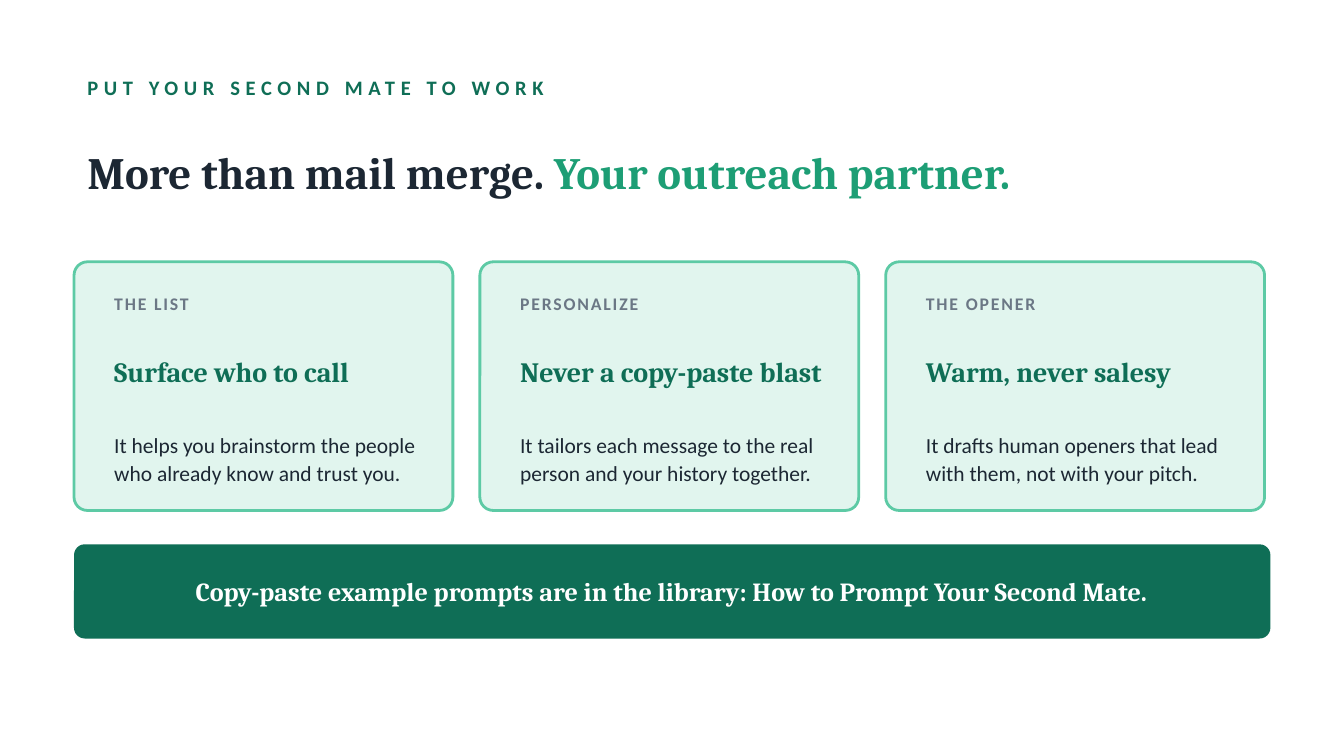
from pptx import Presentation
from pptx.dml.color import RGBColor
from pptx.enum.shapes import MSO_SHAPE as Shape
from pptx.enum.text import MSO_ANCHOR as Anchor, PP_ALIGN as Align
from pptx.util import Cm, Pt

SANS, SERIF = "Calibri", "Cambria"
FOREST, GREEN, MINT, PALE = "0F6E56", "1D9E75", "5DCAA5", "E1F5EE"
INK, SLATE, WHITE = "1C2733", "6B7785", "FFFFFF"

LEFT, CONTENT_WIDTH = 1.4, 22.61
CARD_TOP, CARD_WIDTH, CARD_HEIGHT, CARD_PITCH = 4.95, 7.16, 4.7, 7.67
CARD_PADDING, CARD_TEXT_WIDTH = 0.51, 6.23
BANNER_TOP, BANNER_HEIGHT = 10.29, 1.78

CARDS = [
    ("THE LIST", "Surface who to call",
     "It helps you brainstorm the people who already know and trust you."),
    ("PERSONALIZE", "Never a copy-paste blast",
     "It tailors each message to the real person and your history together."),
    ("THE OPENER", "Warm, never salesy",
     "It drafts human openers that lead with them, not with your pitch."),
]


def rgb(value):
    return RGBColor.from_string(value)


def add_text(slide, box, parts, font, size, bold=True, tracking=0,
             align=Align.LEFT, line_spacing=None):
    frame = slide.shapes.add_textbox(*map(Cm, box)).text_frame
    frame.word_wrap = True
    frame.vertical_anchor = Anchor.MIDDLE
    paragraph = frame.paragraphs[0]
    paragraph.alignment = align
    paragraph.line_spacing = line_spacing
    paragraph.font.name = font
    paragraph.font.size = Pt(size)
    paragraph.font.bold = bold
    for wording, color in parts:
        run = paragraph.add_run()
        run.text = wording
        run.font.color.rgb = rgb(color)
        if tracking:
            run.font._element.set("spc", str(tracking * 100))


def add_panel(slide, box, fill, rounding, outline=None):
    panel = slide.shapes.add_shape(Shape.ROUNDED_RECTANGLE, *map(Cm, box))
    panel.adjustments[0] = rounding
    panel.shadow.inherit = False
    panel.fill.solid()
    panel.fill.fore_color.rgb = rgb(fill)
    if outline:
        panel.line.color.rgb = rgb(outline)
        panel.line.width = Pt(1.5)
    else:
        panel.line.fill.background()


def add_card(slide, left, label, heading, body):
    add_panel(slide, (left, CARD_TOP, CARD_WIDTH, CARD_HEIGHT), PALE, 0.054, MINT)
    text_left = left + CARD_PADDING
    add_text(slide, (text_left, 5.36, CARD_TEXT_WIDTH, 0.76),
             [(label, SLATE)], SANS, 9.5, tracking=1)
    add_text(slide, (text_left, 6.12, CARD_TEXT_WIDTH, 1.78),
             [(heading, FOREST)], SERIF, 15)
    add_text(slide, (text_left, 7.95, CARD_TEXT_WIDTH, 1.4),
             [(body, INK)], SANS, 11.5, bold=False, line_spacing=1.08)


def add_banner(slide, message):
    add_panel(slide, (LEFT, BANNER_TOP, CONTENT_WIDTH, BANNER_HEIGHT), FOREST, 0.114)
    add_text(slide, (2.03, BANNER_TOP, 21.34, BANNER_HEIGHT),
             [(message, WHITE)], SERIF, 14, align=Align.CENTER)


def main():
    deck = Presentation()
    deck.slide_width, deck.slide_height = Cm(25.4), Cm(14.29)
    slide = deck.slides.add_slide(deck.slide_layouts[6])
    slide.background.fill.solid()
    slide.background.fill.fore_color.rgb = rgb(WHITE)

    add_text(slide, (LEFT, 1.27, CONTENT_WIDTH, 0.76),
             [("PUT YOUR SECOND MATE TO WORK", FOREST)], SANS, 11, tracking=3)
    add_text(slide, (LEFT, 2.16, CONTENT_WIDTH, 2.16),
             [("More than mail merge. ", INK), ("Your outreach partner.", GREEN)],
             SERIF, 24)
    for column, card in enumerate(CARDS):
        add_card(slide, LEFT + column * CARD_PITCH, *card)
    add_banner(slide, "Copy-paste example prompts are in the library: "
                      "How to Prompt Your Second Mate.")
    deck.save("out.pptx")


if __name__ == "__main__":
    main()
